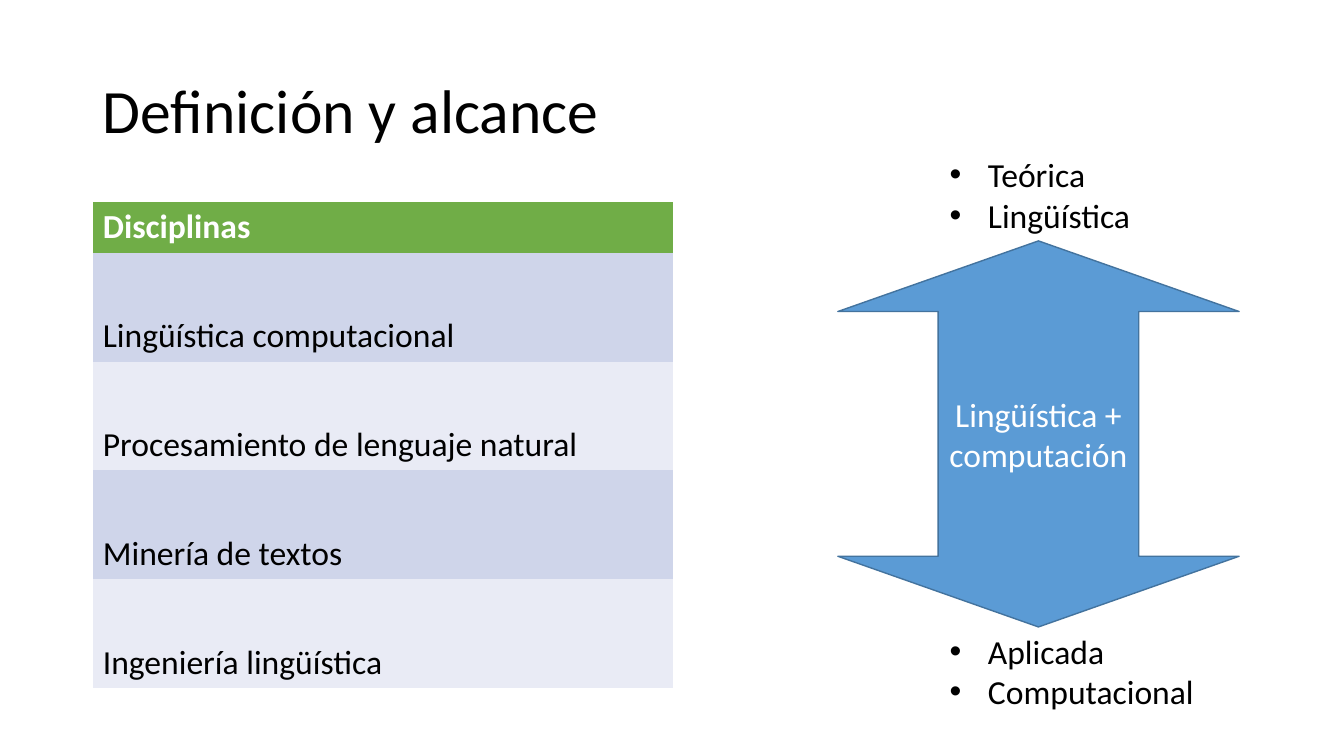
"""Build the slide on the definition and scope of computational linguistics."""
import pptx
import pptx.util
import pptx.dml.color
import pptx.enum.shapes
import pptx.enum.text
from pptx.util import Inches, Pt


def rgb(value):
    return pptx.dml.color.RGBColor.from_string(value)


def add_run(p, text, color="000000", size=24, bold=False):
    r = p.add_run()
    r.text = text
    r.font.name = "Calibri"
    r.font.size = Pt(size)
    r.font.bold = bold
    r.font.color.rgb = rgb(color)


ANCHOR = pptx.enum.text.MSO_ANCHOR
ALIGN = pptx.enum.text.PP_ALIGN

prs = pptx.Presentation()
prs.slide_width = Inches(13.33)
prs.slide_height = Inches(7.5)
s = prs.slides.add_slide(prs.slide_layouts[5])

title = s.shapes.title
title.left, title.top = Inches(0.92), Inches(0.4)
title.width, title.height = Inches(11.5), Inches(1.45)
tf = title.text_frame
tf.vertical_anchor = ANCHOR.MIDDLE
p = tf.paragraphs[0]
p.alignment = ALIGN.LEFT
p.line_spacing = 0.9
add_run(p, "Definición y alcance", size=44)

disciplines = [
    "Disciplinas",
    "Lingüística computacional",
    "Procesamiento de lenguaje natural",
    "Minería de textos",
    "Ingeniería lingüística",
]
frame = s.shapes.add_table(len(disciplines), 1, Inches(0.92), Inches(2), Inches(5.75), Inches(4.82))
table = frame.table
style = table._tbl.tblPr.find(pptx.oxml.ns.qn("a:tableStyleId"))
style.text = "{2D5ABB26-0587-4C30-8999-92F81FD0307C}"
for i, discipline in enumerate(disciplines):
    header = i == 0
    table.rows[i].height = Inches(0.5 if header else 1.08)
    cell = table.cell(i, 0)
    cell.vertical_anchor = ANCHOR.TOP if header else ANCHOR.BOTTOM
    cell.fill.solid()
    cell.fill.fore_color.rgb = rgb("70AD47" if header else ("E9EBF5", "CFD5EA")[i % 2])
    add_run(cell.text_frame.paragraphs[0], discipline, "FFFFFF" if header else "000000", bold=header)

arrow = s.shapes.add_shape(
    pptx.enum.shapes.MSO_SHAPE.UP_DOWN_ARROW, Inches(8.31), Inches(2.39), Inches(3.98), Inches(3.83)
)
guides = arrow._element.spPr.prstGeom.get_or_add_avLst()
for guide in list(guides):
    guides.remove(guide)
for name, value in (("adj1", 50000), ("adj2", 18300)):
    guide = pptx.oxml.xmlchemy.OxmlElement("a:gd")
    guide.set("name", name)
    guide.set("fmla", f"val {value}")
    guides.append(guide)
arrow.shadow.inherit = False
arrow.fill.solid()
arrow.fill.fore_color.rgb = rgb("5B9BD5")
arrow.line.color.rgb = rgb("43739E")
arrow.line.width = Pt(1)
tf = arrow.text_frame
tf.word_wrap = True
tf.vertical_anchor = ANCHOR.MIDDLE
p = tf.paragraphs[0]
p.alignment = ALIGN.CENTER
add_run(p, "Lingüística + computación", "FFFFFF")

poles = [
    (1.48, 2.79, ["Teórica", "Lingüística"]),
    (6.21, 3.66, ["Aplicada", "Computacional"]),
]
for top, width, items in poles:
    box = s.shapes.add_textbox(Inches(9.32), Inches(top), Inches(width), Inches(0.91))
    tf = box.text_frame
    tf.word_wrap = True
    tf.auto_size = pptx.enum.text.MSO_AUTO_SIZE.SHAPE_TO_FIT_TEXT
    for i, item in enumerate(items):
        p = tf.add_paragraph() if i else tf.paragraphs[0]
        pPr = p._p.get_or_add_pPr()
        pPr.set("marL", str(Inches(0.38)))
        pPr.set("indent", str(-Inches(0.38)))
        for tag, key, value in (("a:buFont", "typeface", "Arial"), ("a:buChar", "char", "•")):
            bullet = pptx.oxml.xmlchemy.OxmlElement(tag)
            bullet.set(key, value)
            pPr.append(bullet)
        add_run(p, item)

prs.save("out.pptx")
